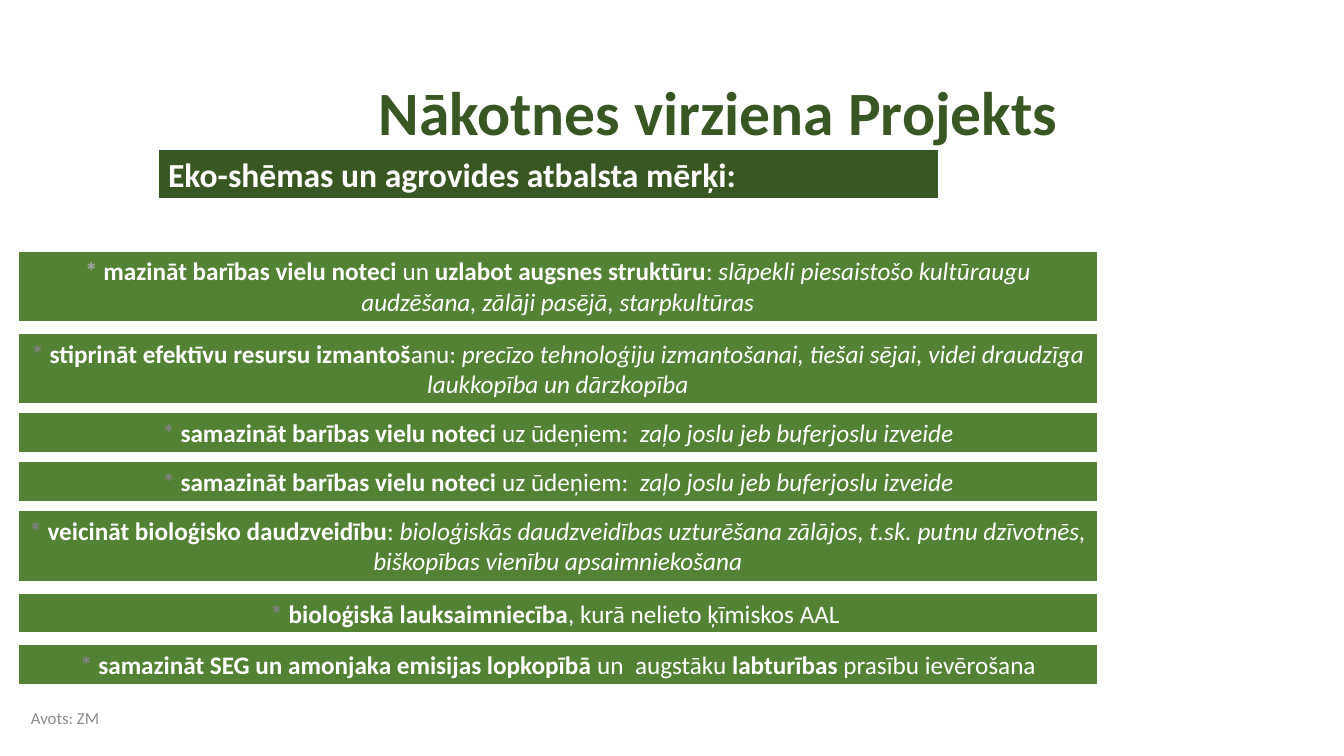
"""Builds a slide listing the goals of eco-scheme and agri-environment support."""
from dataclasses import dataclass

from pptx import Presentation
from pptx.dml.color import RGBColor
from pptx.enum.text import MSO_ANCHOR, MSO_AUTO_SIZE, PP_ALIGN
from pptx.enum.shapes import MSO_SHAPE
from pptx.util import Pt

RECTANGLE = MSO_SHAPE.RECTANGLE
LEFT, CENTER, RIGHT = PP_ALIGN.LEFT, PP_ALIGN.CENTER, PP_ALIGN.RIGHT
TOP, MIDDLE, BOTTOM = MSO_ANCHOR.TOP, MSO_ANCHOR.MIDDLE, MSO_ANCHOR.BOTTOM
FIT_SHAPE, NO_FIT = MSO_AUTO_SIZE.SHAPE_TO_FIT_TEXT, MSO_AUTO_SIZE.NONE
PLAIN, BOLD, ITALIC = "plain", "bold", "italic"
TITLE_ONLY = 5


@dataclass(frozen=True)
class Theme:
    font: str = "Calibri"
    dark_green: RGBColor = RGBColor(0x38, 0x57, 0x23)
    green: RGBColor = RGBColor(0x54, 0x82, 0x35)
    white: RGBColor = RGBColor(0xFF, 0xFF, 0xFF)
    light_star: RGBColor = RGBColor(0xA6, 0xA6, 0xA6)
    star: RGBColor = RGBColor(0x80, 0x80, 0x80)
    source: RGBColor = RGBColor(0x8C, 0x8C, 0x8C)
    title_size: int = 44
    heading_size: int = 24
    goal_size: int = 18
    source_size: int = 12
    outline: float = 1.5


class GoalSlide:
    def __init__(self, slide, theme):
        self.slide = slide
        self.theme = theme

    def format_paragraph(self, paragraph, size, color, align):
        paragraph.alignment = align
        paragraph.font.name = self.theme.font
        paragraph.font.size = Pt(size)
        paragraph.font.color.rgb = color

    def title(self, text, left, top, width, height):
        title = self.slide.shapes.title
        title.left, title.top = Pt(left), Pt(top)
        title.width, title.height = Pt(width), Pt(height)
        frame = title.text_frame
        frame.text = text
        frame.auto_size = NO_FIT
        frame.vertical_anchor = BOTTOM
        frame.margin_left = frame.margin_right = 0
        frame.margin_top = frame.margin_bottom = 0
        paragraph = frame.paragraphs[0]
        paragraph.line_spacing = 0.9
        self.format_paragraph(paragraph, self.theme.title_size, self.theme.dark_green, RIGHT)
        paragraph.font.bold = True

    def bar(self, left, top, width, height, fill, size, align):
        bar = self.slide.shapes.add_shape(RECTANGLE, Pt(left), Pt(top), Pt(width), Pt(height))
        bar.shadow.inherit = False
        bar.fill.solid()
        bar.fill.fore_color.rgb = fill
        bar.line.color.rgb = self.theme.white
        bar.line.width = Pt(self.theme.outline)
        frame = bar.text_frame
        frame.word_wrap = True
        frame.auto_size = FIT_SHAPE
        frame.vertical_anchor = TOP
        paragraph = frame.paragraphs[0]
        self.format_paragraph(paragraph, size, self.theme.white, align)
        return paragraph

    def heading(self, text, left, top, width, height):
        paragraph = self.bar(left, top, width, height, self.theme.dark_green,
                             self.theme.heading_size, LEFT)
        paragraph.add_run().text = text
        paragraph.font.bold = True

    def goal(self, parts, left, top, width, height, star_color):
        paragraph = self.bar(left, top, width, height, self.theme.green,
                             self.theme.goal_size, CENTER)
        star = paragraph.add_run()
        star.text = "* "
        star.font.bold = True
        star.font.color.rgb = star_color
        for text, style in parts:
            run = paragraph.add_run()
            run.text = text
            run.font.bold = style == BOLD
            run.font.italic = style == ITALIC

    def source(self, text, left, top, width, height):
        box = self.slide.shapes.add_textbox(Pt(left), Pt(top), Pt(width), Pt(height))
        frame = box.text_frame
        frame.word_wrap = True
        frame.vertical_anchor = MIDDLE
        frame.text = text
        self.format_paragraph(frame.paragraphs[0], self.theme.source_size,
                              self.theme.source, LEFT)


BUFFER_STRIPS = [
    ("samazināt barības vielu noteci ", BOLD),
    ("uz ūdeņiem:  ", PLAIN),
    ("zaļo joslu jeb buferjoslu izveide", ITALIC),
]
ONE_LINE, TWO_LINES = 29, 51
GOALS = [
    (179, TWO_LINES, [
        ("mazināt barības vielu noteci", BOLD),
        (" un ", PLAIN),
        ("uzlabot augsnes struktūru", BOLD),
        (": ", PLAIN),
        ("slāpekli piesaistošo kultūraugu audzēšana, zālāji pasējā, starpkultūras", ITALIC),
    ]),
    (238, TWO_LINES, [
        ("stiprināt efektīvu resursu izmantoš", BOLD),
        ("anu: ", PLAIN),
        ("precīzo tehnoloģiju izmantošanai, tiešai sējai, videi draudzīga "
         "laukkopība un dārzkopība", ITALIC),
    ]),
    (294.5, ONE_LINE, BUFFER_STRIPS),
    (329.5, ONE_LINE, BUFFER_STRIPS),
    (364.5, TWO_LINES, [
        ("veicināt bioloģisko daudzveidību", BOLD),
        (":", PLAIN),
        (" bioloģiskās daudzveidības uzturēšana zālājos, t.sk. putnu dzīvotnēs, "
         "biškopības vienību apsaimniekošana", ITALIC),
    ]),
    (423.5, ONE_LINE, [
        ("bioloģiskā lauksaimniecība", BOLD),
        (", kurā nelieto ķīmiskos AAL ", PLAIN),
    ]),
    (460, ONE_LINE, [
        ("samazināt SEG un amonjaka emisijas lopkopībā ", BOLD),
        ("un  augstāku ", PLAIN),
        ("labturības", BOLD),
        (" prasību ievērošana", PLAIN),
    ]),
]


def main():
    presentation = Presentation()
    presentation.slide_width, presentation.slide_height = Pt(960), Pt(540)
    theme = Theme()
    page = GoalSlide(presentation.slides.add_slide(presentation.slide_layouts[TITLE_ONLY]), theme)
    page.title("Nākotnes virziena Projekts", 200, 49, 556, 57)
    page.heading("Eko-shēmas un agrovides atbalsta mērķi:", 113, 106.5, 558, 36)
    for index, (top, height, parts) in enumerate(GOALS):
        star_color = theme.star if index else theme.light_star
        page.goal(parts, 13, top, 771, height, star_color)
    page.source("Avots: ZM", 15, 500.5, 208, 24)
    presentation.save("out.pptx")


if __name__ == "__main__":
    main()
